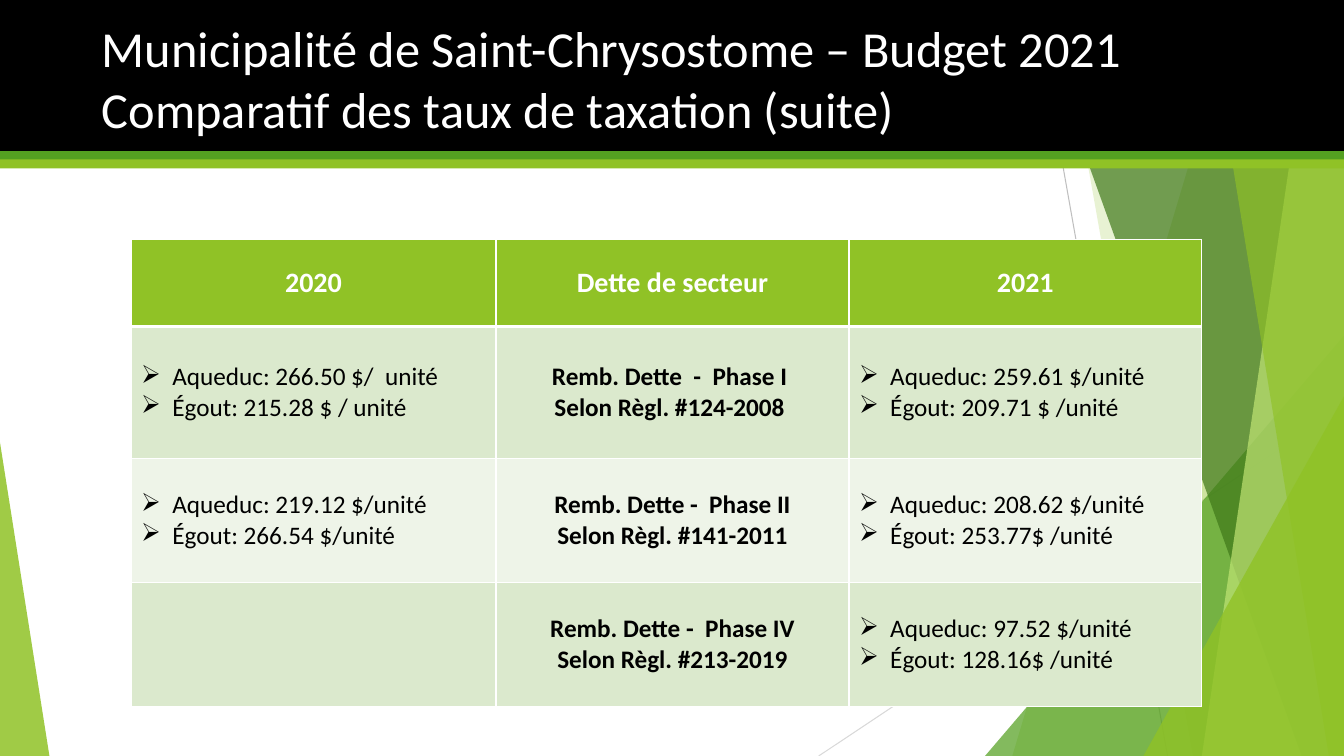
import pptx
import pptx.util
import pptx.dml.color
import pptx.enum.shapes
import pptx.enum.text
import pptx.oxml
import pptx.oxml.ns

PX = 9144
NS = pptx.oxml.ns.nsdecls("a")
Pt = pptx.util.Pt
Kind = pptx.enum.shapes.MSO_SHAPE
Align = pptx.enum.text.PP_ALIGN
Anchor = pptx.enum.text.MSO_ANCHOR


def hue(code):
    return pptx.dml.color.RGBColor.from_string(code)


def paint(shape, code, alpha=100):
    shape.shadow.inherit = False
    shape.line.fill.background()
    shape.fill.solid()
    shape.fill.fore_color.rgb = hue(code)
    if alpha < 100:
        color = shape._element.spPr.find(".//" + pptx.oxml.ns.qn("a:srgbClr"))
        color.append(pptx.oxml.parse_xml(f'<a:alpha {NS} val="{alpha * 1000}"/>'))


deck = pptx.Presentation()
deck.slide_width, deck.slide_height = 1333 * PX, 750 * PX
slide = deck.slides.add_slide(deck.slide_layouts[5])
shapes = slide.shapes

for ends, code in [((1025, 0, 1158, 750), "BFBFBF"), ((1333, 403, 812, 750), "D9D9D9")]:
    line = shapes.add_connector(pptx.enum.shapes.MSO_CONNECTOR.STRAIGHT, *[n * PX for n in ends])
    line.line.width = Pt(0.75)
    line.line.color.rgb = hue(code)
    line._element.spPr.append(pptx.oxml.parse_xml(f"<a:effectLst {NS}/>"))

# (top left, bottom left) of a facet that runs to the right edge,
# or (left, top, width, height, apex) of a triangle
facets = [
    ((1228, 1004), "90C226", 30),
    ((1050, 1183), "90C226", 20),
    ((977, 333, 356, 417, 1), "54A021", 72),
    ((1021, 1291), "3F7819", 70),
    ((1303, 1192), "C0E474", 70),
    ((1196, 1318), "90C226", 65),
    ((1134, 393, 199, 357, 1), "90C226", 80),
    ((0, 439, 49, 311, 0), "90C226", 85),
]
for form, code, alpha in facets:
    if len(form) == 2:
        top, base = form
        pen = shapes.build_freeform(top, 0, scale=PX)
        pen.add_line_segments([(1333, 0), (1333, 750), (base, 750)])
        facet = pen.convert_to_shape()
    else:
        facet = shapes.add_shape(Kind.ISOSCELES_TRIANGLE, *[n * PX for n in form[:4]])
        facet.adjustments[0] = form[4]
    paint(facet, code, alpha)

for top, high, code in [(0, 150, "000000"), (150, 9, "54A021"), (158, 9, "90C226")]:
    paint(shapes.add_shape(Kind.RECTANGLE, 0, top * PX, 1333 * PX, high * PX), code)

title = shapes.title
shapes._spTree.append(title._element)
title.left, title.top, title.width, title.height = 91 * PX, 12 * PX, 1133 * PX, 144 * PX
frame = title.text_frame
frame.text = "Municipalité de Saint-Chrysostome – Budget 2021 Comparatif des taux de taxation (suite)"
frame.word_wrap = True
frame.auto_size = pptx.enum.text.MSO_AUTO_SIZE.NONE
frame.vertical_anchor = Anchor.TOP
head = frame.paragraphs[0]
head.alignment = Align.LEFT
font = head.runs[0].font
font.name, font.size = "Calibri", Pt(36)
font.color.rgb = hue("FFFFFF")

rows = [
    ["2020", "Dette de secteur", "2021"],
    ["Aqueduc: 266.50 $/  unité\nÉgout: 215.28 $ / unité",
     "Remb. Dette  -  Phase I \nSelon Règl. #124-2008 ",
     "Aqueduc: 259.61 $/unité\nÉgout: 209.71 $ /unité"],
    ["Aqueduc: 219.12 $/unité\nÉgout: 266.54 $/unité",
     "Remb. Dette -  Phase II\nSelon Règl. #141-2011",
     "Aqueduc: 208.62 $/unité\nÉgout: 253.77$ /unité"],
    ["",
     "Remb. Dette -  Phase IV\nSelon Règl. #213-2019",
     "Aqueduc: 97.52 $/unité\nÉgout: 128.16$ /unité"],
]
fills = ["90C226", "DBE9CD", "EEF4E8", "DBE9CD"]
table = shapes.add_table(4, 3, 130 * PX, 238 * PX, 1062 * PX, 463 * PX).table
for col, wide in zip(table.columns, [362, 350, 350]):
    col.width = wide * PX
for row, high in zip(table.rows, [86, 131, 123, 123]):
    row.height = high * PX

for r, texts in enumerate(rows):
    for c, text in enumerate(texts):
        cell = table.cell(r, c)
        cell.vertical_anchor = Anchor.MIDDLE
        for side in "LRTB":
            thick = 3 if (r, side) in [(0, "B"), (1, "T")] else 1
            cell._tc.get_or_add_tcPr().append(pptx.oxml.parse_xml(
                f'<a:ln{side} {NS} w="{thick * 12700}"><a:solidFill>'
                f'<a:srgbClr val="FFFFFF"/></a:solidFill></a:ln{side}>'))
        cell.fill.solid()
        cell.fill.fore_color.rgb = hue(fills[r])
        cell.text_frame.text = text
        bold = r == 0 or c == 1
        for para in cell.text_frame.paragraphs:
            if bold:
                para.alignment = Align.CENTER
            elif text:
                props = para._p.get_or_add_pPr()
                props.set("marL", str(31 * PX))
                props.set("indent", str(-31 * PX))
                props.append(pptx.oxml.parse_xml(f'<a:buChar {NS} char="➢"/>'))
            for run in para.runs:
                run.font.name, run.font.bold = "Calibri", bold
                run.font.size = Pt(18 if r else 20)
                run.font.color.rgb = hue("000000" if r else "FFFFFF")

deck.save("out.pptx")
